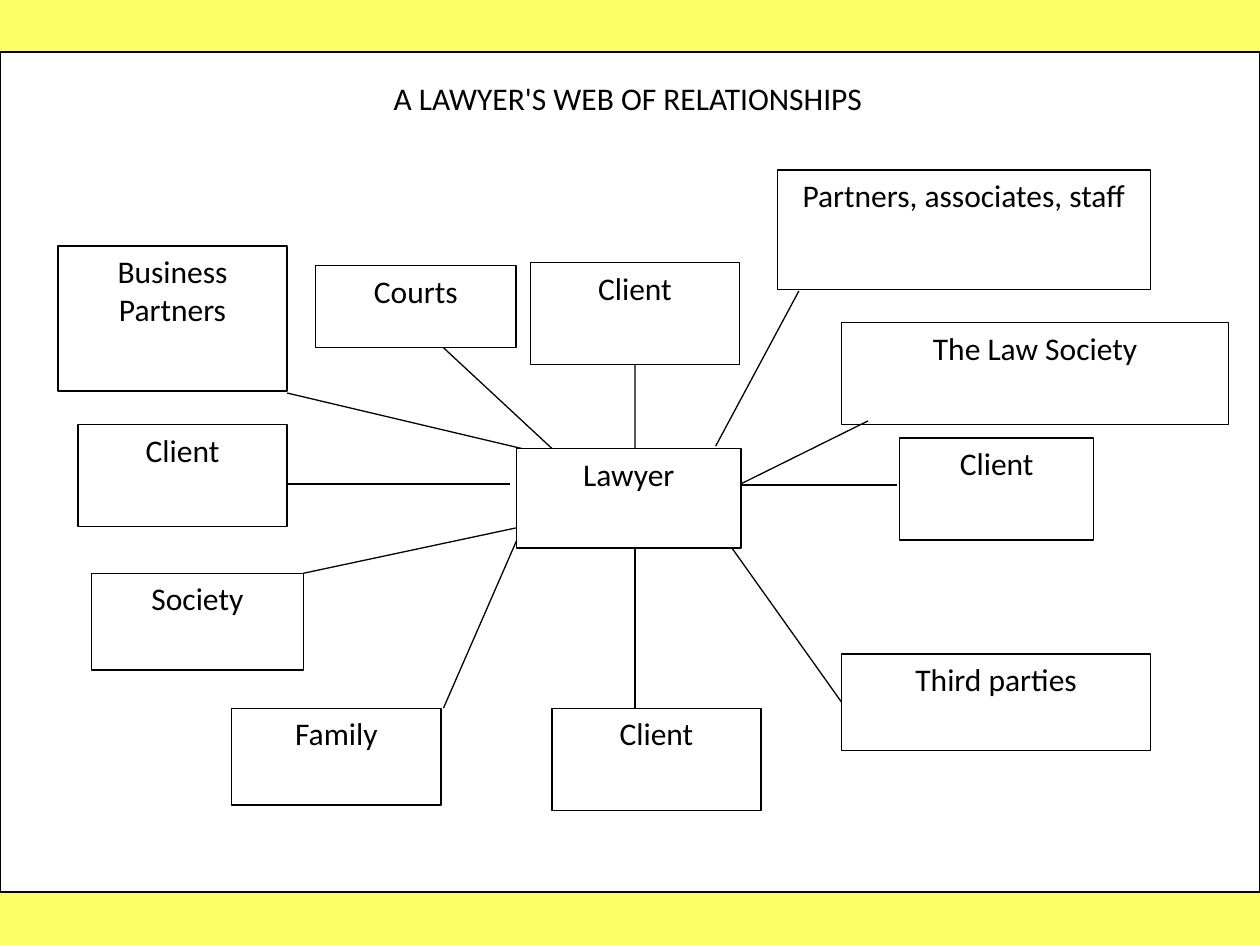
from pptx import Presentation
from pptx.dml.color import RGBColor
from pptx.enum.shapes import MSO_CONNECTOR as CONN, MSO_SHAPE as SHAPE
from pptx.enum.text import MSO_ANCHOR as ANCHOR, PP_ALIGN as ALIGN
from pptx.oxml.ns import qn
from pptx.util import Pt
from lxml.etree import SubElement

BLACK, WHITE, YELLOW = "000000", "FFFFFF", "FFFF66"
BOTTOM, LEFT = 2, 1

BOXES = {
    "partners": ("Partners, associates, staff", 444.2, 97.2, 213.1, 68.4),
    "client right": ("Client", 514.1, 250.2, 111, 58.3),
    "client left": ("Client", 44.6, 242.6, 119.5, 58.3),
    "client below": ("Client", 315.4, 404.7, 119.5, 58.3),
    "client above": ("Client", 303.1, 149.9, 119.5, 58.3),
    "law society": ("The Law Society", 481, 184.3, 221, 58.3),
    "third parties": ("Third parties", 481, 373.7, 176.4, 55.4),
    "society": ("Society", 52.3, 327.6, 121, 55.4),
    "family": ("Family", 132.5, 404.7, 119.5, 55.4),
    "business": ("Business Partners", 33.1, 140.6, 131, 82.8),
    "courts": ("Courts", 180.4, 151.9, 114.5, 46.8),
}
LAWYER = ("Lawyer", 295.2, 256.3, 128.2, 56.9)

LINES = {
    "client right": (423.4, 277.2, 512.6, 277.2),
    "client below": (362.9, 313.2, 362.9, 404.7),
    "client above": (362.9, 208.2, 362.9, 256.3),
    "client left": (164.1, 276.5, 291.6, 276.5),
    "business": (164.1, 224.6, 298.1, 256.3),
    "partners": (409, 254.9, 456.5, 166.3),
    "law society": (423.4, 276.5, 496.1, 240.5),
    "courts": (253.4, 198.7, 315.4, 256.3),
    "family": (295.2, 308.9, 253.4, 404.7),
    "society": (298.1, 301, 173.3, 327.6),
    "third parties": (481, 401.4, 418.3, 313.2),
}
JOINED_SIDES = {"client above": BOTTOM, "third parties": LEFT}


def rgb(value):
    """Return the colour for a hex string."""
    return RGBColor.from_string(value)


def add_box(slide, x, y, w, h, fill=WHITE, line=BLACK):
    """Add a rectangle, with fill and outline where given."""
    sp = slide.shapes.add_shape(SHAPE.RECTANGLE, Pt(x), Pt(y), Pt(w), Pt(h))
    sp.shadow.inherit = False
    if fill:
        sp.fill.solid()
        sp.fill.fore_color.rgb = rgb(fill)
    else:
        sp.fill.background()
    if line:
        sp.line.color.rgb = rgb(line)
        sp.line.width = Pt(0.75)
    else:
        sp.line.fill.background()
    return sp


def add_label(slide, text, *frame, **style):
    """Add a rectangle with text centred at its top."""
    sp = add_box(slide, *frame, **style)
    tf = sp.text_frame
    tf.word_wrap = True
    tf.vertical_anchor = ANCHOR.TOP
    p = tf.paragraphs[0]
    p.alignment = ALIGN.CENTER
    p.space_after = Pt(10)
    r = p.add_run()
    r.text = text
    r.font.name = "Calibri"
    r.font.size = Pt(18)
    r.font.color.rgb = rgb(BLACK)
    return sp


def add_line(slide, x1, y1, x2, y2):
    """Add a thin black straight connector."""
    line = slide.shapes.add_connector(CONN.STRAIGHT, Pt(x1), Pt(y1), Pt(x2), Pt(y2))
    line.line.color.rgb = rgb(BLACK)
    line.line.width = Pt(0.75)
    SubElement(line._element.spPr, qn("a:effectLst"))
    return line


def main():
    """Build the web of relationships and save it."""
    prs = Presentation()
    prs.slide_width, prs.slide_height = Pt(720), Pt(540)
    s = prs.slides.add_slide(prs.slide_layouts[6])
    s.background.fill.solid()
    s.background.fill.fore_color.rgb = rgb(YELLOW)

    add_box(s, 0, 29.8, 720, 480)
    add_label(s, "A LAWYER'S WEB OF RELATIONSHIPS", 92.9, 41.8, 532, 45.4,
              fill=None, line=None)
    boxes = {name: add_label(s, *box) for name, box in BOXES.items()}
    for name, ends in LINES.items():
        line = add_line(s, *ends)
        if name in JOINED_SIDES:
            line.begin_connect(boxes[name], JOINED_SIDES[name])
    add_label(s, *LAWYER)
    prs.save("out.pptx")


if __name__ == "__main__":
    main()
